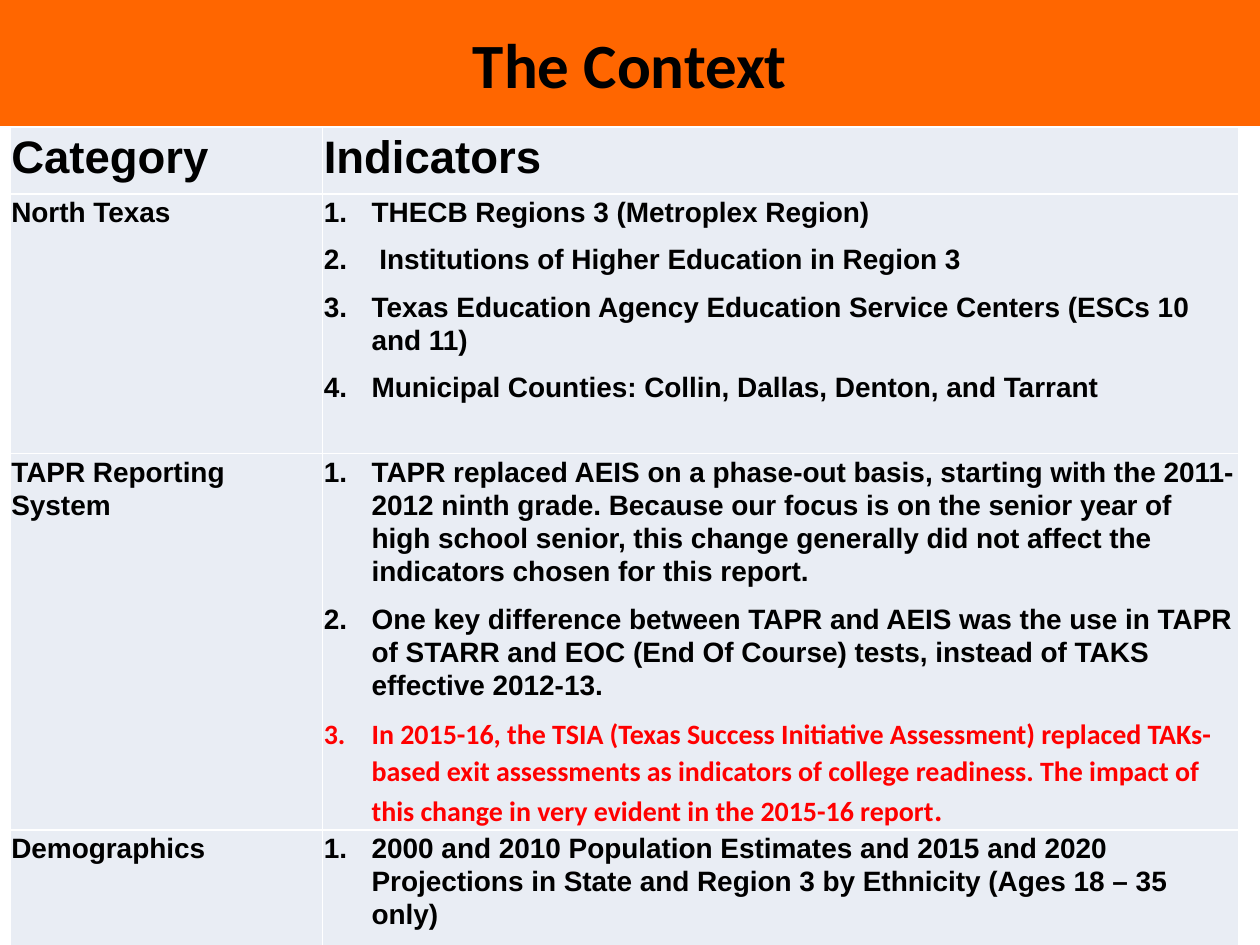
import pptx
import pptx.util
import pptx.dml.color
import pptx.enum.text
import pptx.oxml.ns
import lxml.etree

Inches = pptx.util.Inches
Pt = pptx.util.Pt
Color = pptx.dml.color.RGBColor
ORANGE = Color(0xFF, 0x66, 0x00)
BLACK = Color(0, 0, 0)
RED = Color(0xFF, 0, 0)
PALE = Color(0xE9, 0xED, 0xF4)

HEADS = ["Category", "Indicators"]
ROWS = [
    ("North Texas", [
        "THECB Regions 3 (Metroplex Region)",
        " Institutions of Higher Education in Region 3",
        "Texas Education Agency Education Service Centers (ESCs 10 and 11)",
        "Municipal Counties: Collin, Dallas, Denton, and Tarrant",
    ]),
    ("TAPR Reporting System", [
        "TAPR replaced AEIS on a phase-out basis, starting with the 2011-2012 "
        "ninth grade. Because our focus is on the senior year of high school "
        "senior, this change generally did not affect the indicators chosen "
        "for this report.",
        "One key difference between TAPR and AEIS was the use in TAPR of STARR "
        "and EOC (End Of Course) tests, instead of TAKS effective 2012-13.",
        "In 2015-16, the TSIA (Texas Success Initiative Assessment) replaced "
        "TAKs-based exit assessments as indicators of college readiness. The "
        "impact of this change in very evident in the 2015-16 report",
    ]),
    ("Demographics", [
        "2000 and 2010 Population Estimates and 2015 and 2020 Projections in "
        "State and Region 3 by Ethnicity (Ages 18 – 35 only)",
    ]),
]
WIDTHS = [2.48, 7.27]
HEIGHTS = [0.53, 2.06, 2.85, 1.01]


class Deck:
    """Holds the text style and the current slide."""

    def __init__(self):
        self.show = pptx.Presentation()
        self.show.slide_width = Inches(10)
        self.show.slide_height = Inches(7.5)
        self.slide = self.show.slides.add_slide(self.show.slide_layouts[5])

    def style(self, para, size, name="Arial", color=BLACK):
        font = para.font
        font.size = Pt(size)
        font.name = name
        font.bold = True
        font.color.rgb = color

    def title(self, text):
        bar = self.slide.shapes.title
        bar.left, bar.top = Inches(0), Inches(0)
        bar.width, bar.height = Inches(10), Inches(1)
        bar.fill.solid()
        bar.fill.fore_color.rgb = ORANGE
        bar.text_frame.vertical_anchor = pptx.enum.text.MSO_ANCHOR.MIDDLE
        para = bar.text_frame.paragraphs[0]
        para.text = text
        para.alignment = pptx.enum.text.PP_ALIGN.CENTER
        self.style(para, 36, "Calibri")

    def number(self, para):
        props = para._p.get_or_add_pPr()
        props.set("marL", str(Inches(0.38)))
        props.set("indent", str(-Inches(0.38)))
        tag = pptx.oxml.ns.qn("a:buAutoNum")
        lxml.etree.SubElement(props, tag, type="arabicPeriod")

    def cell(self, cell, lines, size=16, listed=False):
        cell.fill.solid()
        cell.fill.fore_color.rgb = PALE
        cell.margin_left = cell.margin_right = cell.margin_top = Inches(0.01)
        cell.margin_bottom = 0
        cell.text = "\n".join(lines)
        for para in cell.text_frame.paragraphs:
            if listed:
                self.number(para)
            para.line_spacing = 1.07
            para.space_after = Pt(8)
            self.style(para, size)

    def table(self, heads, rows):
        grid = self.slide.shapes.add_table(
            len(rows) + 1, len(heads), Inches(0.08), Inches(1.01),
            Inches(sum(WIDTHS)), Inches(sum(HEIGHTS))).table
        grid.first_row = grid.horz_banding = False
        for col, width in zip(grid.columns, WIDTHS):
            col.width = Inches(width)
        for row, height in zip(grid.rows, HEIGHTS):
            row.height = Inches(height)
        for col, head in enumerate(heads):
            self.cell(grid.cell(0, col), [head], 26)
        for row, (name, items) in enumerate(rows, 1):
            self.cell(grid.cell(row, 0), [name])
            self.cell(grid.cell(row, 1), items, listed=True)
        return grid

    def stress(self, para):
        self.style(para, 16, "Calibri", RED)
        stop = para.add_run()
        stop.text = "."
        stop.font.size = Pt(18)


def main():
    deck = Deck()
    deck.title("The Context")
    grid = deck.table(HEADS, ROWS)
    deck.stress(grid.cell(2, 1).text_frame.paragraphs[-1])
    deck.show.save("out.pptx")


if __name__ == "__main__":
    main()
